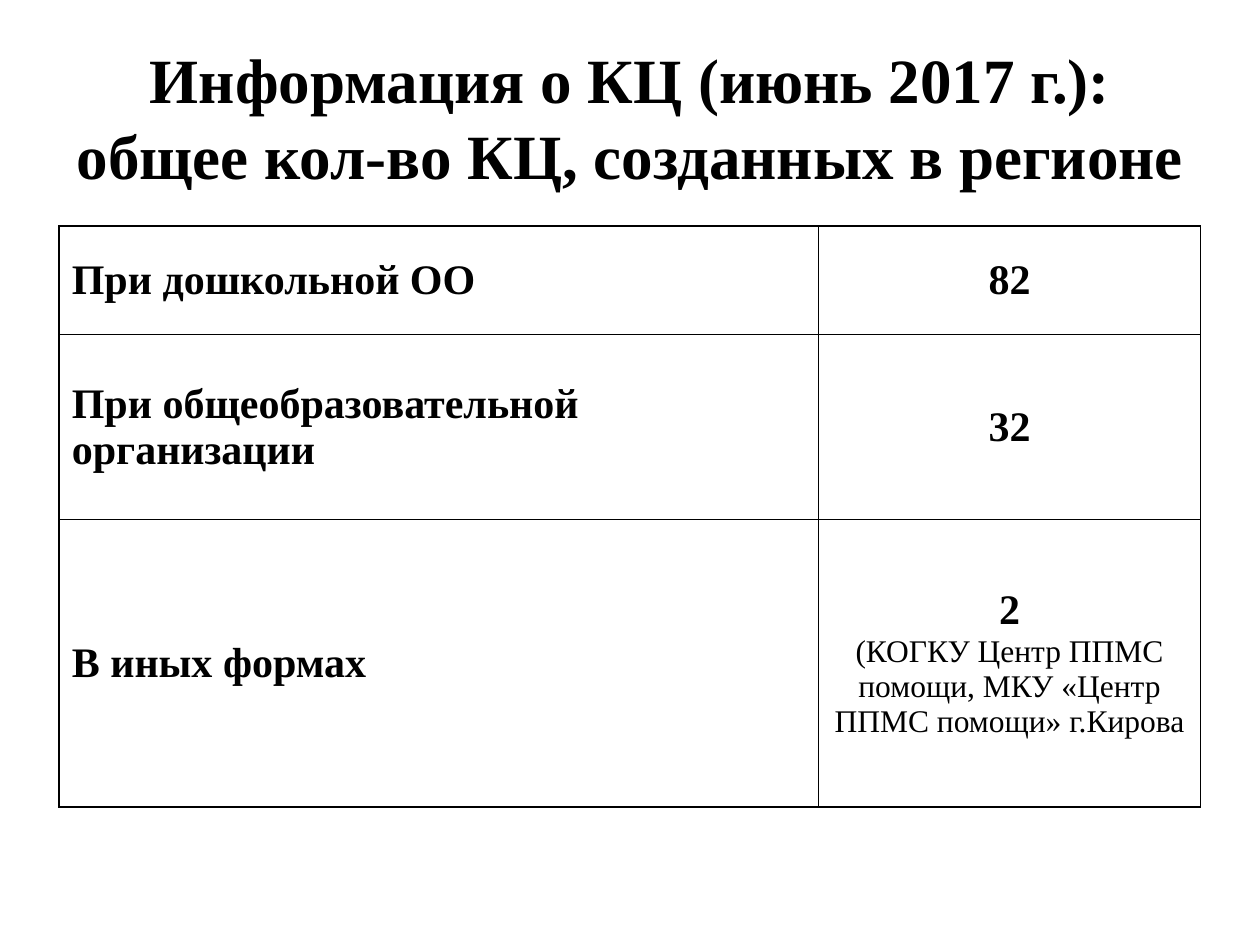
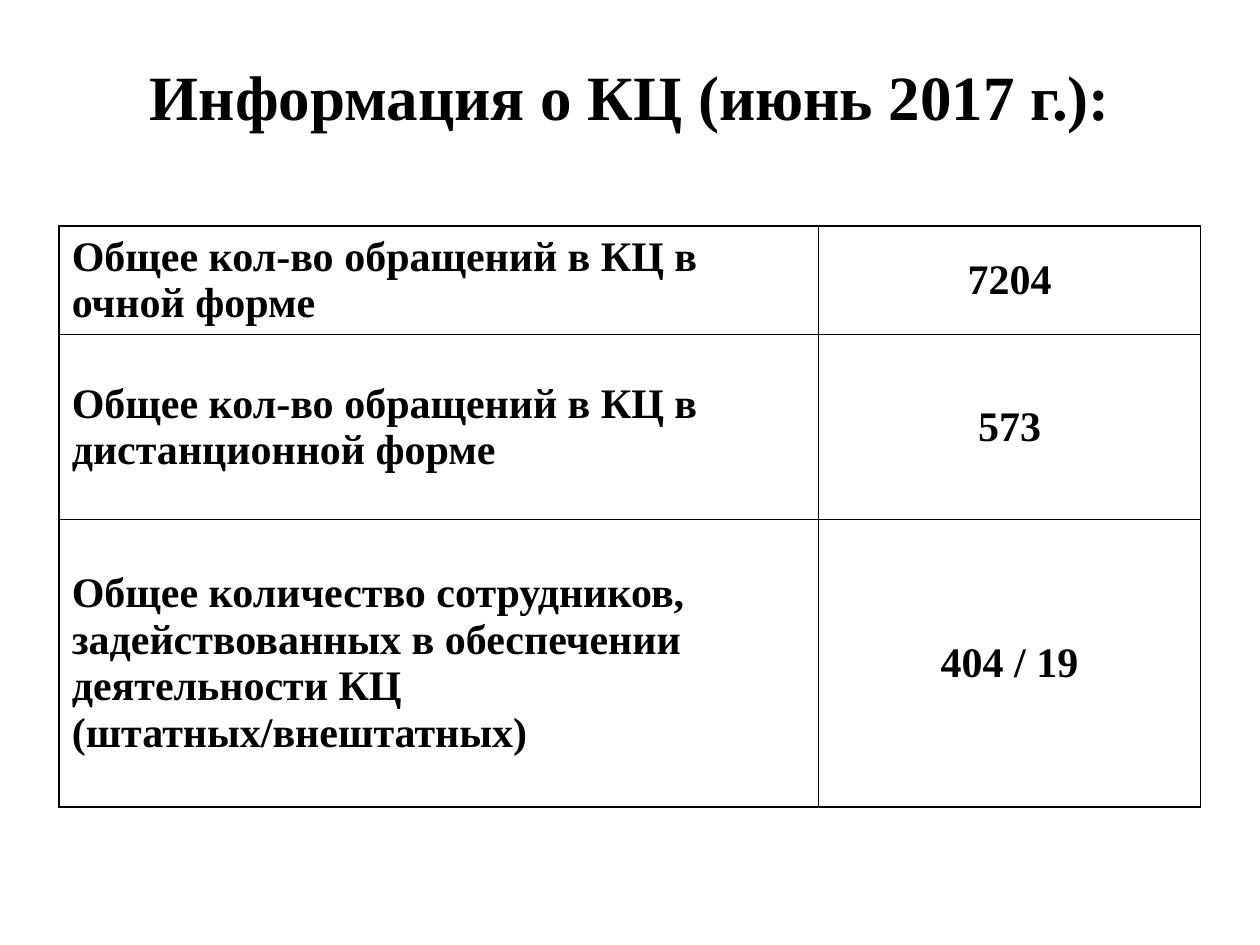
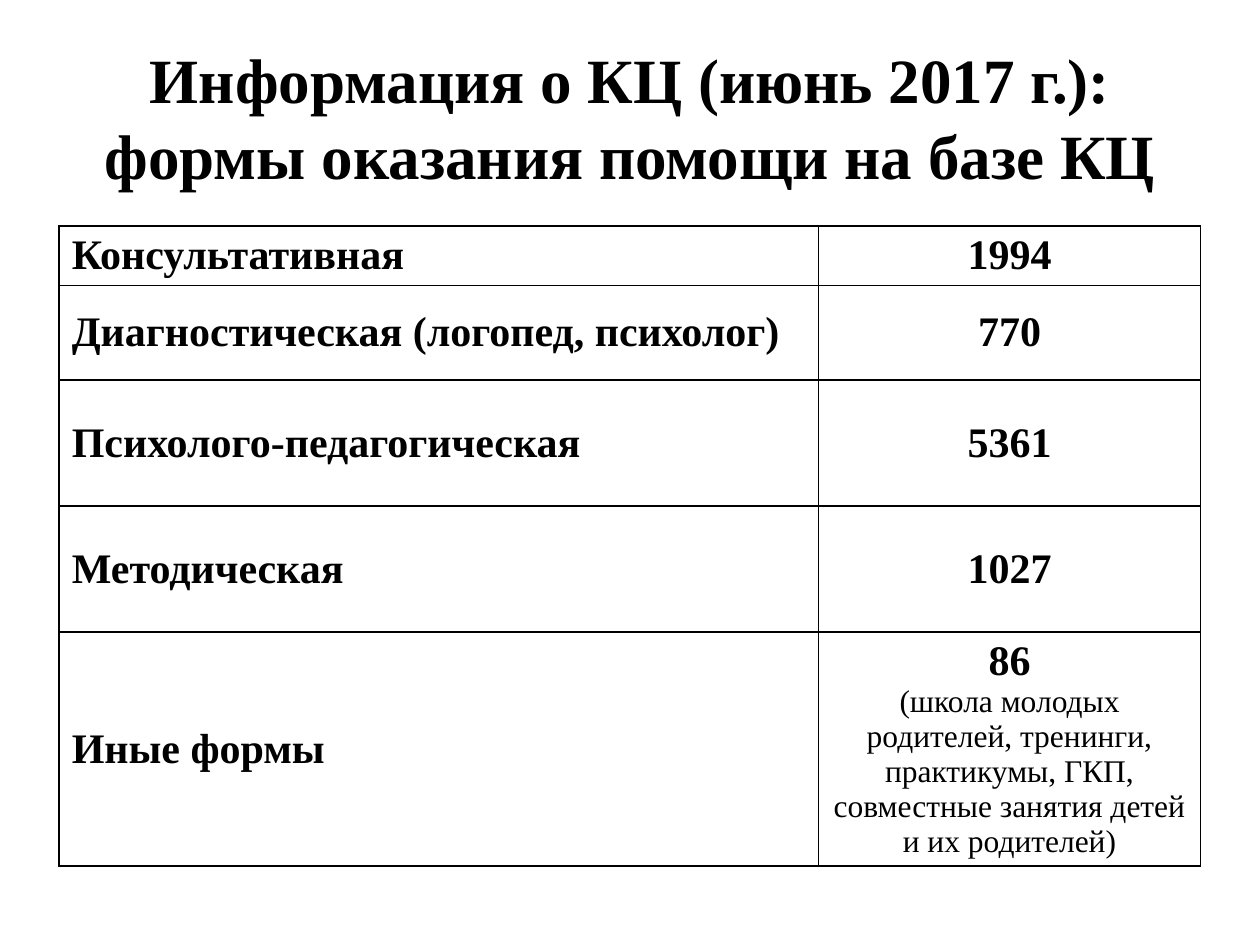
from dataclasses import dataclass

from lxml.etree import SubElement
from pptx import Presentation
from pptx.dml.color import RGBColor
from pptx.enum.text import MSO_ANCHOR, PP_ALIGN
from pptx.oxml.ns import qn
from pptx.slide import Slide
from pptx.table import _Cell
from pptx.text.text import _Paragraph
from pptx.util import Inches, Length, Pt


@dataclass(frozen=True)
class TextStyle:
    size: int
    align: PP_ALIGN
    bold: bool = True
    line_height: float | None = None


@dataclass(frozen=True)
class Theme:
    font: str = "Times New Roman"
    ink: str = "000000"
    paper: str = "FFFFFF"
    border_width: int = 1
    title: TextStyle = TextStyle(36, PP_ALIGN.CENTER)
    label: TextStyle = TextStyle(24, PP_ALIGN.LEFT, line_height=26.5)
    value: TextStyle = TextStyle(24, PP_ALIGN.CENTER, line_height=26.5)
    note: TextStyle = TextStyle(18, PP_ALIGN.CENTER, bold=False, line_height=20)


@dataclass(frozen=True)
class Grid:
    width: Length = Inches(10)
    height: Length = Inches(7.5)
    columns: int = 100
    rows: int = 75

    def x(self, columns: float) -> Length:
        return Length(round(self.width * columns / self.columns))

    def y(self, rows: float) -> Length:
        return Length(round(self.height * rows / self.rows))


@dataclass(frozen=True)
class Title:
    text: str
    top: float = 3
    height: float = 12.5
    bottom_inset: float = 0.5


@dataclass(frozen=True)
class Entry:
    label: str
    value: str
    height: float
    note: str = ""


@dataclass(frozen=True)
class TableSlide:
    title: Title
    entries: tuple[Entry, ...]


THEME = Theme()
GRID = Grid()
TITLE_LEFT, TITLE_WIDTH = 5, 90
TABLE_LEFT, TABLE_TOP = 4.7, 17.95
TABLE_COLUMNS = (60.25, 30.35)
HEADING = "Информация о КЦ (июнь 2017 г.):"

SLIDES = (
    TableSlide(
        Title(f"{HEADING}\vобщее кол-во КЦ, созданных в регионе"),
        (
            Entry("При дошкольной ОО", "82", 8.6),
            Entry("При общеобразовательной организации", "32", 14.7),
            Entry("В иных формах", "2", 22.8,
                  "(КОГКУ Центр ППМС помощи, МКУ «Центр ППМС помощи» г.Кирова"),
        ),
    ),
    TableSlide(
        Title(HEADING, top=5.5, height=10.2, bottom_inset=6.5),
        (
            Entry("Общее кол-во обращений в КЦ в очной форме", "7204", 8.6),
            Entry("Общее кол-во обращений в КЦ в дистанционной форме", "573", 14.7),
            Entry("Общее количество сотрудников, задействованных в обеспечении "
                  "деятельности КЦ (штатных/внештатных)", "404 / 19", 22.8),
        ),
    ),
    TableSlide(
        Title(f"{HEADING}\vформы оказания помощи на базе КЦ"),
        (
            Entry("Консультативная", "1994", 4.7),
            Entry("Диагностическая (логопед, психолог)", "770", 7.5),
            Entry("Психолого-педагогическая", "5361", 10),
            Entry("Методическая", "1027", 10),
            Entry("Иные формы", "86", 18.5,
                  "(школа молодых родителей, тренинги, практикумы, ГКП, "
                  "совместные занятия детей и их родителей)"),
        ),
    ),
)


def write(paragraph: _Paragraph, text: str, style: TextStyle) -> None:
    paragraph.text = text
    paragraph.alignment = style.align
    if style.line_height:
        paragraph.line_spacing = Pt(style.line_height)
    for run in paragraph.runs:
        run.font.name = THEME.font
        run.font.size = Pt(style.size)
        run.font.bold = style.bold
        run.font.color.rgb = RGBColor.from_string(THEME.ink)


def draw_title(slide: Slide, title: Title) -> None:
    box = slide.shapes.add_textbox(
        GRID.x(TITLE_LEFT), GRID.y(title.top), GRID.x(TITLE_WIDTH), GRID.y(title.height)
    )
    frame = box.text_frame
    frame.word_wrap = True
    frame.vertical_anchor = MSO_ANCHOR.MIDDLE
    frame.margin_bottom = GRID.y(title.bottom_inset)
    write(frame.paragraphs[0], title.text, THEME.title)


def style_cell(cell: _Cell) -> None:
    cell.vertical_anchor = MSO_ANCHOR.MIDDLE
    properties = cell._tc.get_or_add_tcPr()
    for side in ("a:lnL", "a:lnR", "a:lnT", "a:lnB"):
        line = SubElement(properties, qn(side), w=str(Pt(THEME.border_width)))
        fill = SubElement(line, qn("a:solidFill"))
        SubElement(fill, qn("a:srgbClr"), val=THEME.ink)
    cell.fill.solid()
    cell.fill.fore_color.rgb = RGBColor.from_string(THEME.paper)


def draw_table(slide: Slide, entries: tuple[Entry, ...]) -> None:
    table = slide.shapes.add_table(
        len(entries), len(TABLE_COLUMNS), GRID.x(TABLE_LEFT), GRID.y(TABLE_TOP),
        GRID.x(sum(TABLE_COLUMNS)), GRID.y(sum(entry.height for entry in entries)),
    ).table
    table.first_row = False
    table.horz_banding = False
    for column, width in zip(table.columns, TABLE_COLUMNS):
        column.width = GRID.x(width)
    for row, entry in zip(table.rows, entries):
        row.height = GRID.y(entry.height)
        label_cell, value_cell = row.cells
        style_cell(label_cell)
        style_cell(value_cell)
        write(label_cell.text_frame.paragraphs[0], entry.label, THEME.label)
        write(value_cell.text_frame.paragraphs[0], entry.value, THEME.value)
        if entry.note:
            write(value_cell.text_frame.add_paragraph(), entry.note, THEME.note)


def main() -> None:
    presentation = Presentation()
    presentation.slide_width = GRID.width
    presentation.slide_height = GRID.height
    blank_layout = presentation.slide_layouts[6]
    for content in SLIDES:
        slide = presentation.slides.add_slide(blank_layout)
        draw_title(slide, content.title)
        draw_table(slide, content.entries)
    presentation.save("out.pptx")


if __name__ == "__main__":
    main()
